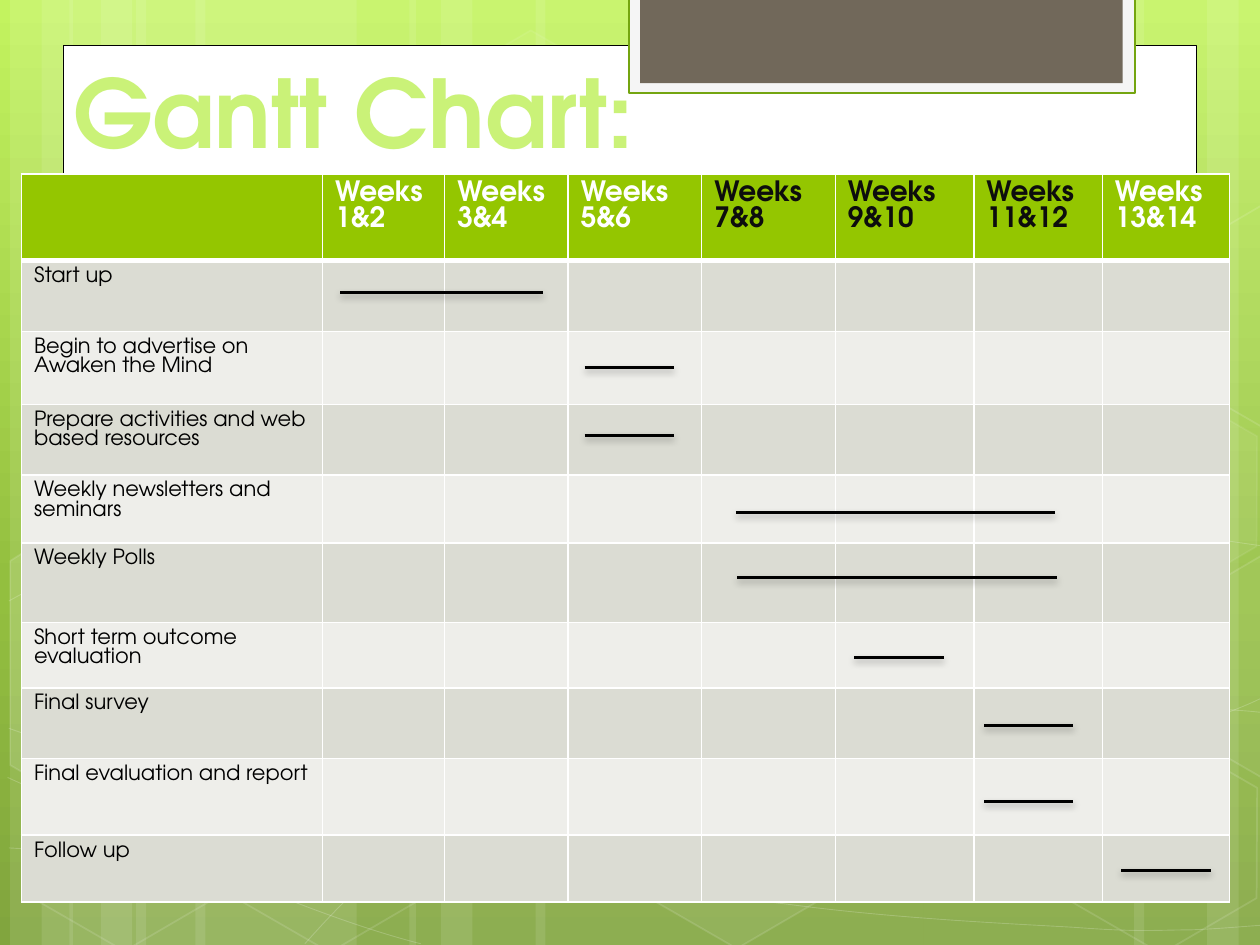
from copy import deepcopy
from math import cos, radians, sin

from lxml import etree
from pptx import Presentation
from pptx.dml.color import RGBColor
from pptx.enum import shapes as kinds, text as styles
from pptx.oxml.ns import qn
from pptx.util import Inches, Pt

FONT = "TeX Gyre Adventor"
TITLE = "Gantt Chart:"
BACKGROUND = [(0, "C3F35F"), (0.62, "93BF3F"), (1, "81A53E")]

# Period and its text colour
PERIODS = [("Weeks\n1&2", "FFFFFF"), ("Weeks\n3&4", "FFFFFF"), ("Weeks\n5&6", "FFFFFF"),
           ("Weeks 7&8", "0D0D0D"), ("Weeks 9&10", "0D0D0D"), ("Weeks 11&12", "0D0D0D"),
           ("Weeks 13&14", "FFFFFF")]
# Task, row height, then start, end and height of its bar on the slide
TASKS = [
    ("Start up", 0.56, 2.7, 4.31, 2.32),
    ("Begin to advertise on Awaken the Mind", 0.58, 4.64, 5.35, 2.92),
    ("Prepare activities and web based resources", 0.56, 4.64, 5.35, 3.46),
    ("Weekly newsletters and seminars", 0.54, 5.84, 8.37, 4.07),
    ("Weekly Polls", 0.63, 5.85, 8.39, 4.58),
    ("Short term outcome evaluation", 0.52, 6.78, 7.49, 5.22),
    ("Final survey", 0.56, 7.81, 8.52, 5.76),
    ("Final evaluation and report", 0.61, 7.81, 8.52, 6.36),
    ("Follow up", 0.53, 8.9, 9.61, 6.91),
]
COLUMN_WIDTHS = [2.39, 0.97, 0.98, 1.06, 1.06, 1.1, 1.02, 1.01]
HEADER_HEIGHT = 0.69

# Left edge and width of each full-height stripe, and those turned half round
STRIPES = [(1.08, 1.75), (0.08, 0.5), (0.33, 0.83), (1.55, 1.75), (0.55, 0.5), (0.8, 0.83),
           (7.33, 1.75), (9.58, 0.5), (9, 0.83), (4.25, 3.08), (3.25, 0.5), (3.5, 0.83)]
TURNED_STRIPES = STRIPES[6:9]
# Each curve is a start point followed by Bezier triples, bar one straight step
CURVES = [
    [(0.07, 6.73), (0.61, 6.76), (1.15, 6.79), (1.9, 6.78), (2.65, 6.77), (3.58, 6.75),
     (4.58, 6.65), (5.58, 6.55), (7, 6.36), (7.92, 6.17), (8.83, 5.98), (9.77, 5.68),
     (10.07, 5.51)],
    [(0.07, 4.77), (0.36, 4.61), (0.65, 4.46), (1.21, 4.31), (1.78, 4.16), (2.59, 3.94),
     (3.47, 3.87), (4.36, 3.8), (5.44, 3.79), (6.54, 3.87), (7.64, 3.95), (9.47, 4.26),
     (10.07, 4.34)],
    [(0.06, 6.17), (1.27, 6.72), (2.47, 7.27), (3.34, 7.49)],
    [(0.07, 5.78), (0.38, 5.89), (0.7, 6), (1.28, 6.16), (1.86, 6.31), (2.73, 6.56),
     (3.57, 6.73), (4.4, 6.9), (5.45, 7.08), (6.28, 7.18), (7.11, 7.29), (8, 7.33),
     (8.53, 7.36), (9.05, 7.4), (9.19, 7.38), (9.45, 7.38), (9.71, 7.37), (9.89, 7.35),
     (10.07, 7.34)],
    [(2.42, 7.49), (2.6, 7.29), (2.78, 7.09), (3.02, 6.91), (3.26, 6.73), (3.6, 6.53),
     (3.88, 6.39), (4.16, 6.25), (4.33, 6.19), (4.7, 6.09), (5.06, 5.99), (5.73, 5.85),
     (6.08, 5.78), (6.44, 5.71), (6.49, 5.71), (6.8, 5.69), (7.11, 5.66), (7.6, 5.63),
     (7.94, 5.62), (8.29, 5.61), (8.86, 5.62), (8.86, 5.62), (9.53, 5.62),
     (9.71, 5.63), (9.88, 5.64), (9.97, 5.65), (10.06, 5.66), (10.03, 5.65), (10.06, 5.66)],
]
STRAIGHT_TO = (9.53, 5.62)
TILT = 30
# Left, top, fill opacity (None for outline only), line opacity
HEXAGONS = [(3.34, 0.36, 4, 8), (4.97, 5.89, 6, 12), (0.11, 5.91, None, 12),
            (0.14, 3.12, 7, 8), (1.74, 5.92, None, 12), (7.53, 4.53, 10, 12),
            (8.34, 5.93, None, 12), (8.34, 3.14, 7, 8)]
# Corners, centre and fill opacity of hexagons cut by the slide edge
CUT_HEXAGONS = [
    ([(0.08, 4.45), (0.19, 4.38), (0.96, 4.82), (0.95, 5.7), (0.2, 6.14), (0.08, 6.07)],
     (0.36, 5.35), 10),
    ([(9.26, 4.85), (10.01, 4.41), (10.09, 4.46), (10.09, 6.13), (10.02, 6.17), (9.26, 5.73)],
     (9.85, 5.2), 4),
    ([(9.26, 2.07), (10.01, 1.63), (10.1, 1.68), (10.09, 3.35), (10.02, 3.39), (9.26, 2.95)],
     (9.85, 2.41), None),
]
# Left, top, width, height, fill, line colour, line width
PANELS = [(0.5, 0.36, 9, 6.76, "FFFFFF", "000000", 0.5),
          (4.99, -0.02, 4.02, 0.76, "F5F5F5", "74A510", 1.25),
          (5.08, -0.02, 3.83, 0.68, "71685A", None, 0)]


def paint(fill, colour, opacity=100):
    """Fill with a hex colour, or with nothing when colour or opacity is None."""
    if colour is None or opacity is None:
        fill.background()
        return
    fill.solid()
    fill.fore_color.rgb = RGBColor.from_string(colour)
    if opacity < 100:
        solid = fill._xPr.find(qn("a:solidFill"))
        etree.SubElement(solid[0], qn("a:alpha"), val=str(opacity * 1000))


def dress(shape, fill, fill_opacity, line, line_opacity=100, line_width=1):
    shape.shadow.inherit = False
    paint(shape.fill, fill, fill_opacity)
    paint(shape.line.fill, line, line_opacity)
    if line:
        shape.line.width = Pt(line_width)


def add_preset(slide, kind, *box):
    return slide.shapes.add_shape(kind, *map(Inches, box))


def add_outline(slide, points, close):
    points = [(Inches(x), Inches(y)) for x, y in points]
    builder = slide.shapes.build_freeform(*points[0])
    builder.add_line_segments(points[1:], close=close)
    return builder.convert_to_shape()


def add_curve(slide, points):
    """Draw the control points as lines, then join each three into one Bezier."""
    curve = add_outline(slide, points, False)
    steps = list(curve._element.iter(qn("a:lnTo")))
    if STRAIGHT_TO in points:
        del steps[points.index(STRAIGHT_TO) - 1]
    for first in range(0, len(steps), 3):
        bezier = etree.Element(qn("a:cubicBezTo"))
        steps[first].addprevious(bezier)
        for step in steps[first:first + 3]:
            bezier.append(step[0])
            step.getparent().remove(step)
    return curve


def turn_back(point, centre):
    dx, dy = point[0] - centre[0], point[1] - centre[1]
    c, s = cos(radians(TILT)), sin(radians(TILT))
    return centre[0] + dx * c + dy * s, centre[1] - dx * s + dy * c


def format_text(frame, size, colour, bold, spacing=None):
    for paragraph in frame.paragraphs:
        paragraph.line_spacing = spacing
        for run in paragraph.runs:
            for key, value in dict(name=FONT, size=Pt(size), bold=bold).items():
                setattr(run.font, key, value)
            run.font.color.rgb = RGBColor.from_string(colour)


def add_background(slide):
    fill = slide.background.fill
    fill.gradient()
    stops = slide._element.find(".//" + qn("a:gsLst"))
    stops.append(deepcopy(stops[-1]))
    for stop, (position, colour) in zip(fill.gradient_stops, BACKGROUND):
        stop.position = position
        stop.color.rgb = RGBColor.from_string(colour)
    fill.gradient_angle = 270


def add_decoration(slide):
    preset = kinds.MSO_SHAPE
    for left, width in STRIPES:
        stripe = add_preset(slide, preset.RECTANGLE, left, 0, width, 7.5)
        stripe.rotation = 180 if (left, width) in TURNED_STRIPES else 0
        dress(stripe, "FFFFFF", 10, None)
    for points in CURVES:
        dress(add_curve(slide, points), None, None, "FFFFFF", 20, 0.5)
    for left, top, fill_opacity, line_opacity in HEXAGONS:
        hexagon = add_preset(slide, preset.HEXAGON, left, top, 1.75, 1.52)
        hexagon.adjustments[0] = 0.285
        hexagon.rotation = TILT
        dress(hexagon, "FFFFFF", fill_opacity, "FFFFFF", line_opacity)
    for corners, centre, opacity in CUT_HEXAGONS:
        hexagon = add_outline(slide, [turn_back(corner, centre) for corner in corners], True)
        hexagon.rotation = TILT
        dress(hexagon, "FFFFFF", opacity, "FFFFFF", 12)
    for *box, fill, line, width in PANELS:
        dress(add_preset(slide, preset.RECTANGLE, *box), fill, 100, line, 100, width)


def place_title(slide):
    title = slide.shapes.title
    slide.shapes._spTree.append(title._element)  # in front of the panels
    for side, value in dict(left=0.48, top=0.13, width=7.68, height=1.25).items():
        setattr(title, side, Inches(value))
    title.text_frame.text = TITLE
    title.text_frame.vertical_anchor = styles.MSO_ANCHOR.BOTTOM
    title.text_frame.paragraphs[0].alignment = styles.PP_ALIGN.LEFT
    format_text(title.text_frame, 54, "CAF278", True)


def dress_cell(cell, fill, bottom_width):
    properties = cell._tc.get_or_add_tcPr()
    for side, width in dict(L=1, R=1, T=1, B=bottom_width).items():
        border = etree.SubElement(properties, qn("a:ln" + side), w=str(Pt(width)))
        solid = etree.SubElement(border, qn("a:solidFill"))
        etree.SubElement(solid, qn("a:srgbClr"), val="FFFFFF")
    paint(cell.fill, fill)


def add_schedule(slide):
    heights = [HEADER_HEIGHT] + [task[1] for task in TASKS]
    box = map(Inches, (0.17, 1.38, sum(COLUMN_WIDTHS), sum(heights)))
    table = slide.shapes.add_table(len(heights), len(COLUMN_WIDTHS), *box).table
    for column, width in zip(table.columns, COLUMN_WIDTHS):
        column.width = Inches(width)
    for index, (row, height) in enumerate(zip(table.rows, heights)):
        row.height = Inches(height)
        fill = "94C600" if index == 0 else ("EEEEEA", "DBDCD3")[index % 2]
        for cell in row.cells:
            dress_cell(cell, fill, 1 if index else 3)
    for column, (period, colour) in enumerate(PERIODS, 1):
        cell = table.cell(0, column)
        cell.text = period
        format_text(cell.text_frame, 16, colour, True, Pt(15))
    for row, task in enumerate(TASKS, 1):
        cell = table.cell(row, 0)
        cell.text = task[0]
        format_text(cell.text_frame, 12, "000000", False, Pt(11.2))


def add_bar(slide, start, end, y):
    bar = slide.shapes.add_connector(kinds.MSO_CONNECTOR.STRAIGHT,
                                     *map(Inches, (start, y, end, y)))
    paint(bar.line.fill, "000000")
    bar.line.width = Pt(1.75)
    effects = etree.SubElement(bar._element.spPr, qn("a:effectLst"))
    shadow = etree.SubElement(effects, qn("a:outerShdw"), blurRad=str(Pt(4)),
                              dist=str(Pt(2)), dir="5400000", rotWithShape="0")
    black = etree.SubElement(shadow, qn("a:srgbClr"), val="000000")
    etree.SubElement(black, qn("a:alpha"), val="28000")


def main():
    deck = Presentation()
    deck.slide_width, deck.slide_height = Inches(10), Inches(7.5)
    slide = deck.slides.add_slide(deck.slide_layouts[5])
    add_background(slide)
    add_decoration(slide)
    place_title(slide)
    add_schedule(slide)
    for _, _, start, end, y in TASKS:
        add_bar(slide, start, end, y)
    deck.save("out.pptx")


if __name__ == "__main__":
    main()
